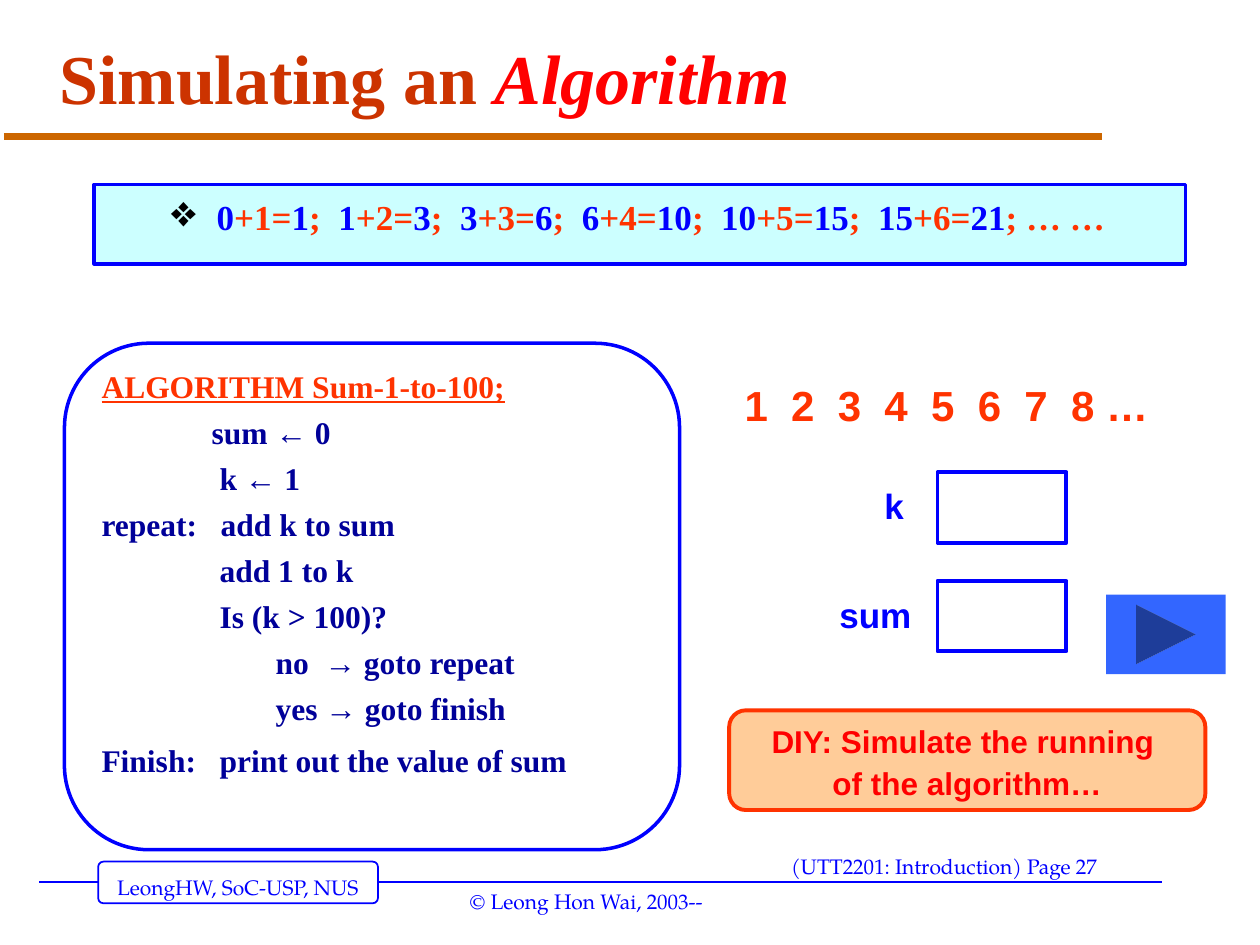
from lxml import etree
from pptx import Presentation
from pptx.dml.color import RGBColor
from pptx.enum.shapes import MSO_CONNECTOR, MSO_SHAPE
from pptx.enum.text import MSO_ANCHOR, MSO_AUTO_SIZE, PP_ALIGN
from pptx.oxml.ns import qn
from pptx.util import Cm, Pt

RECTANGLE = MSO_SHAPE.RECTANGLE
ROUNDED = MSO_SHAPE.ROUNDED_RECTANGLE
NEXT_BUTTON = MSO_SHAPE.ACTION_BUTTON_FORWARD_OR_NEXT
STRAIGHT = MSO_CONNECTOR.STRAIGHT
TOP, MIDDLE = MSO_ANCHOR.TOP, MSO_ANCHOR.MIDDLE
LEFT, CENTER = PP_ALIGN.LEFT, PP_ALIGN.CENTER
GROW = MSO_AUTO_SIZE.SHAPE_TO_FIT_TEXT

BLUE = RGBColor(0x00, 0x00, 0xFF)
NAVY = RGBColor(0x00, 0x00, 0x99)
BUTTON_BLUE = RGBColor(0x33, 0x66, 0xFF)
CYAN = RGBColor(0xCC, 0xFF, 0xFF)
WHITE = RGBColor(0xFF, 0xFF, 0xFF)
RED = RGBColor(0xFF, 0x00, 0x00)
ORANGE = RGBColor(0xFF, 0x33, 0x00)
RUST = RGBColor(0xCC, 0x33, 0x00)
BROWN = RGBColor(0xCC, 0x66, 0x00)
PEACH = RGBColor(0xFF, 0xCC, 0x99)

SERIF, SANS, FOOTER_FONT = "Times New Roman", "Arial", "TeX Gyre Pagella"
WIDE, NARROW = 0.25, 0.13

FOOTERS = [
    ("LeongHW, SoC-USP, NUS", 2.11, 17.5, 5.44),
    ("(UTT2201: Introduction) Page 27", 15.7, 17.07, 6.71),
    ("© Leong Hon Wai, 2003--", 9.22, 17.78, 5.26),
]
STEPS = [
    ("ALGORITHM Sum-1-to-100;", 0),
    ("sum ← 0", 2.22),
    ("k ← 1", 2.38),
    ("repeat:   add k to sum", 0),
    ("add 1 to k", 2.38),
    ("Is (k > 100)?", 2.38),
    ("no  → goto repeat", 3.51),
    ("yes → goto finish", 3.51),
    ("Finish:   print out the value of sum", 0),
]
VARIABLES = [("sum", 16.79, 11.71, 1.8), ("k", 17.7, 9.52, 0.7)]


def add_line(page, left, right, y, color, width):
    line = page.shapes.add_connector(STRAIGHT, Cm(left), Cm(y), Cm(right), Cm(y))
    line.line.color.rgb = color
    line.line.width = Pt(width)
    etree.SubElement(line._element.spPr, qn("a:effectLst"))


def add_box(page, kind, area, fill=None, outline=None, width=2):
    box = page.shapes.add_shape(kind, *map(Cm, area))
    box.shadow.inherit = False
    if fill is None:
        box.fill.background()
    else:
        box.fill.solid()
        box.fill.fore_color.rgb = fill
    if outline is None:
        box.line.fill.background()
    else:
        box.line.color.rgb = outline
        box.line.width = Pt(width)
    return box


def set_frame(box, wrap=True, anchor=TOP, left=WIDE, right=WIDE):
    frame = box.text_frame
    frame.word_wrap = wrap
    frame.vertical_anchor = anchor
    frame.margin_left, frame.margin_right = Cm(left), Cm(right)
    frame.margin_top = frame.margin_bottom = Cm(NARROW)
    return frame


def style(span, font, size, color, bold=True):
    span.font.name = font
    span.font.size = Pt(size)
    span.font.color.rgb = color
    span.font.bold = bold


def write(frame, text, font, size, color, bold=True, spacing=1.0, align=LEFT):
    frame.text = text
    para = frame.paragraphs[0]
    para.alignment = align
    para.line_spacing = spacing
    for span in para.runs:
        style(span, font, size, color, bold)
    return para


def add_label(page, area, text, font, size, color, bold=True, spacing=1.0,
              wrap=True, **layout):
    box = page.shapes.add_textbox(*map(Cm, area))
    frame = set_frame(box, wrap, **layout)
    if not wrap:
        frame.auto_size = GROW
    return write(frame, text, font, size, color, bold, spacing)


def add_footer(page):
    add_line(page, 0.79, 23.42, 17.78, BLUE, 1)
    box = add_box(page, ROUNDED, (1.98, 17.37, 5.64, 0.84), WHITE, BLUE, 1)
    box.adjustments[0] = 0.125
    for text, left, top, width in FOOTERS:
        add_label(page, (left, top, width, 0.76), text, FOOTER_FONT, 12, BLUE,
                  bold=False, wrap=False)


def add_title(page):
    add_line(page, 0.08, 22.22, 2.75, BROWN, 4)
    para = add_label(page, (0.95, 0.53, 22.76, 2.24), "Simulating an ", SERIF, 40,
                     RUST, spacing=0.9, anchor=MIDDLE)
    span = para.add_run()
    span.text = "Algorithm"
    style(span, SERIF, 40, RED)
    span.font.italic = True


def add_algorithm(page):
    box = add_box(page, ROUNDED, (1.3, 6.92, 12.4, 10.21), outline=BLUE)
    frame = set_frame(box)
    frame.text = "\n".join(text for text, indent in STEPS)
    for para, (text, indent) in zip(frame.paragraphs, STEPS):
        para.alignment = LEFT
        para.line_spacing = 0.8
        para.space_before = Pt(9)
        para._p.get_or_add_pPr().set("marL", str(Cm(indent)))
        style(para.runs[0], SERIF, 18, NAVY)
    frame.paragraphs[-1].space_before = Pt(12)
    heading = frame.paragraphs[0].runs[0]
    heading.font.color.rgb = ORANGE
    heading.font.underline = True


def add_bullet(para, symbol, margin, hanging):
    props = para._p.get_or_add_pPr()
    props.set("marL", str(Cm(margin)))
    props.set("indent", str(-Cm(hanging)))
    color = etree.SubElement(props, qn("a:buClr"))
    etree.SubElement(color, qn("a:srgbClr")).set("val", "000000")
    etree.SubElement(props, qn("a:buSzPct")).set("val", "125000")
    etree.SubElement(props, qn("a:buChar")).set("char", symbol)


def add_sums(page):
    box = add_box(page, RECTANGLE, (1.9, 3.72, 22, 1.6), CYAN, BLUE)
    para = set_frame(box).paragraphs[0]
    para.alignment = LEFT
    para.line_spacing = 1.1
    add_bullet(para, "❖", 2.22, 0.92)
    total, last = 0, 6
    for k in range(1, last + 1):
        ending = "; … …" if k == last else ";  "
        pieces = [(str(total), BLUE), (f"+{k}=", ORANGE),
                  (str(total + k), BLUE), (ending, ORANGE)]
        for text, color in pieces:
            span = para.add_run()
            span.text = text
            style(span, SERIF, 20, color)
        total += k


def add_variable(page, name, left, top, width):
    add_box(page, RECTANGLE, (18.9, top, 2.6, 1.42), outline=BLUE, width=2.25)
    add_label(page, (left, top + 0.04, width, 1.19), name, SANS, 20, BLUE,
              spacing=1.1, wrap=False, left=NARROW, right=NARROW)


def add_exercise(page):
    box = add_box(page, ROUNDED, (14.7, 14.32, 9.6, 2.01), PEACH, ORANGE, 2.25)
    frame = set_frame(box, wrap=False, anchor=MIDDLE, left=NARROW, right=NARROW)
    write(frame, "DIY: Simulate the running \vof the algorithm…", SANS, 18, RED,
          spacing=1.1, align=CENTER)


def main():
    deck = Presentation()
    deck.slide_width, deck.slide_height = Cm(25.4), Cm(19.05)
    page = deck.slides.add_slide(deck.slide_layouts[6])
    add_footer(page)
    add_title(page)
    add_algorithm(page)
    add_label(page, (14.88, 7.52, 9.6, 1.27), "1  2  3  4  5  6  7  8 …", SANS, 24,
              ORANGE, left=NARROW, right=0.51)
    add_sums(page)
    for variable in VARIABLES:
        add_variable(page, *variable)
    add_exercise(page)
    add_box(page, NEXT_BUTTON, (22.3, 11.99, 2.41, 1.6), BUTTON_BLUE)
    deck.save("out.pptx")


if __name__ == "__main__":
    main()
